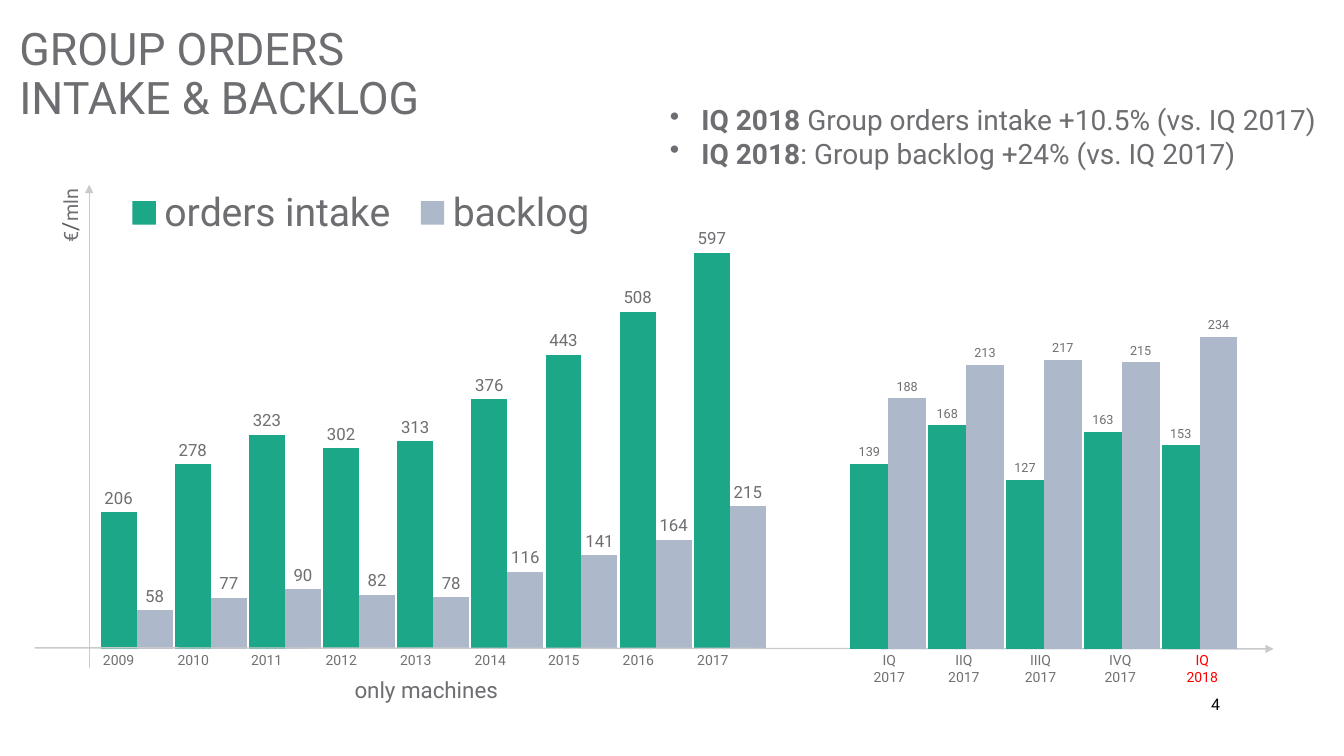
from pptx import Presentation
from pptx import util as u
from pptx.chart.data import CategoryChartData
from pptx.dml.color import RGBColor
from pptx.enum import chart as ch, shapes, text
from pptx.oxml import parse_xml
from pptx.oxml.ns import nsdecls, qn
from lxml import etree

PX = 9525
GREEN, BLUE_GREY = "1DA789", "ADB9CA"
GREY, LABEL_GREY, LINE_GREY = "6D6E71", "707173", "C9CACC"
RED, BLACK = "FF0000", "000000"
LEFT, CENTER, RIGHT = text.PP_ALIGN.LEFT, text.PP_ALIGN.CENTER, text.PP_ALIGN.RIGHT


def px(length):
    return u.Emu(length * PX)


def color(hex_string):
    return RGBColor.from_string(hex_string)


def set_layout(parent, index, box, inner=False):
    """Place a chart part by hand; box is x, y, w, h as fractions of the chart."""
    for old in parent.findall(qn("c:layout")):
        parent.remove(old)
    target = '<c:layoutTarget val="inner"/>' if inner else ""
    modes = '<c:xMode val="edge"/><c:yMode val="edge"/>'
    sizes = "".join(f'<c:{name} val="{value}"/>' for name, value in zip("xywh", box))
    parent.insert(index, parse_xml(
        f'<c:layout {nsdecls("c")}><c:manualLayout>{target}{modes}{sizes}'
        '</c:manualLayout></c:layout>'))


class SlideBuilder:
    font_name = "Roboto"

    def __init__(self, slide):
        self.slide = slide

    def style(self, font, size, hex_string):
        font.name = self.font_name
        font.size = u.Pt(size)
        font.color.rgb = color(hex_string)

    def text(self, box, lines, size, hex_string=GREY, align=LEFT, inset=False,
             spacing=None, bullet=False, rotation=0):
        """Add a text box; each line is a list of (text, bold) runs."""
        shape = self.slide.shapes.add_textbox(*map(px, box))
        shape.rotation = rotation
        frame = shape.text_frame
        frame.word_wrap = True
        if not inset:
            frame.margin_left = frame.margin_right = 0
            frame.margin_top = frame.margin_bottom = 0
        for i, runs in enumerate(lines):
            paragraph = frame.add_paragraph() if i else frame.paragraphs[0]
            paragraph.alignment = align
            if spacing:
                paragraph.line_spacing = spacing
            if bullet:
                properties = paragraph._p.get_or_add_pPr()
                properties.set("marL", str(px(32)))
                properties.set("indent", str(px(-30)))
                etree.SubElement(properties, qn("a:buChar")).set("char", "•")
            self.style(paragraph.font, size, hex_string)
            for words, bold in runs:
                run = paragraph.add_run()
                run.text = words
                if bold:
                    run.font.bold = True
        return shape

    def arrow(self, start, end):
        line = self.slide.shapes.add_connector(
            shapes.MSO_CONNECTOR.STRAIGHT, *map(px, start + end))
        line.line.color.rgb = color(LINE_GREY)
        line.line.width = u.Pt(1)
        etree.SubElement(line.line._get_or_add_ln(), qn("a:tailEnd")).set("type", "triangle")
        etree.SubElement(line._element.spPr, qn("a:effectLst"))

    def column_chart(self, box, series, maximum, label_size, plot_box, legend_box=None):
        data = CategoryChartData()
        data.categories = [str(i + 1) for i in range(len(series[0][1]))]
        for name, values in series:
            data.add_series(name, values)
        chart = self.slide.shapes.add_chart(
            ch.XL_CHART_TYPE.COLUMN_CLUSTERED, *map(px, box), data).chart
        self.style(chart.font, 14, BLACK)
        chart.has_title = False
        chart.category_axis.visible = False
        axis = chart.value_axis
        axis.visible = axis.has_major_gridlines = False
        axis.minimum_scale, axis.maximum_scale = 0, maximum
        plot = chart.plots[0]
        plot.gap_width, plot.overlap = 6, 0
        plot.vary_by_categories = False
        for columns, fill in zip(plot.series, (GREEN, BLUE_GREY)):
            columns.format.fill.solid()
            columns.format.fill.fore_color.rgb = color(fill)
            labels = columns.data_labels
            labels.show_value = True
            labels.number_format, labels.number_format_is_linked = "0", False
            labels.position = ch.XL_LABEL_POSITION.OUTSIDE_END
            self.style(labels.font, label_size, GREY)
        set_layout(chart.element.find(".//" + qn("c:plotArea")), 0, plot_box, inner=True)
        chart.has_legend = legend_box is not None
        if legend_box:
            chart.legend.position = ch.XL_LEGEND_POSITION.BOTTOM
            chart.legend.include_in_layout = False
            self.style(chart.legend.font, 28, GREY)
            set_layout(chart.element.find(".//" + qn("c:legend")), 1, legend_box)


def main():
    presentation = Presentation()
    presentation.slide_width, presentation.slide_height = px(1280), px(720)
    builder = SlideBuilder(presentation.slides.add_slide(presentation.slide_layouts[6]))

    builder.text((1079, 661, 83, 59), [[("4", False)]], 11.4, BLACK, RIGHT)
    builder.text((9, 21, 859, 100),
                 [[("GROUP ORDERS", False)], [("INTAKE & BACKLOG", False)]],
                 32, inset=True, spacing=0.9)

    builder.column_chart(
        (83, 173, 660, 498),
        [("orders intake", (206, 278, 323, 302, 313, 376, 443, 508, 597)),
         ("backlog", (58, 77, 90, 82, 78, 116, 141, 164, 215))],
        700, 12, (0.018, 0.005, 0.963, 0.889), legend_box=(0.04, 0.01, 0.71, 0.1))
    builder.arrow((85, 636), (85, 176))
    unit = builder.text((35, 198, 64, 28),
                        [[("€", False), ("/", False), ("mln", False)]],
                        14, align=RIGHT, rotation=270)
    builder.style(unit.text_frame.paragraphs[0].runs[1].font, 16, "595959")
    builder.arrow((33, 617), (1213, 618))

    builder.text((636, 98, 628, 64),
                 [[("IQ 2018", True), (" Group orders intake +10.5% (vs. IQ 2017)", False)],
                  [("IQ 2018", True), (": Group backlog +24% (vs. IQ 2017)", False)]],
                 20, bullet=True)

    for i in range(9):
        builder.text((83 + round(70.7 * i), 616, 60, 26), [[(str(2009 + i), False)]],
                     10, LABEL_GREY, CENTER, inset=True)
    builder.text((190, 644, 432, 26), [[("only machines", False)]], 16, align=CENTER)

    builder.column_chart(
        (802, 299, 385, 320),
        [("Series 1", (139, 168, 127, 163, 153)),
         ("Series 2", (188, 213, 217, 215, 234))],
        250, 9, (0.018, 0.005, 0.963, 0.994))
    quarters = [(817, "IQ 2017"), (888, "IIQ 2017"), (961, "IIIQ 2017"),
                (1037, "IVQ 2017"), (1115, "IQ 2018")]
    for left, quarter in quarters:
        builder.text((left, 616, 60, 42), [[(quarter, False)]], 10,
                     RED if quarter == "IQ 2018" else LABEL_GREY, CENTER, inset=True)

    presentation.save("out.pptx")


if __name__ == "__main__":
    main()
